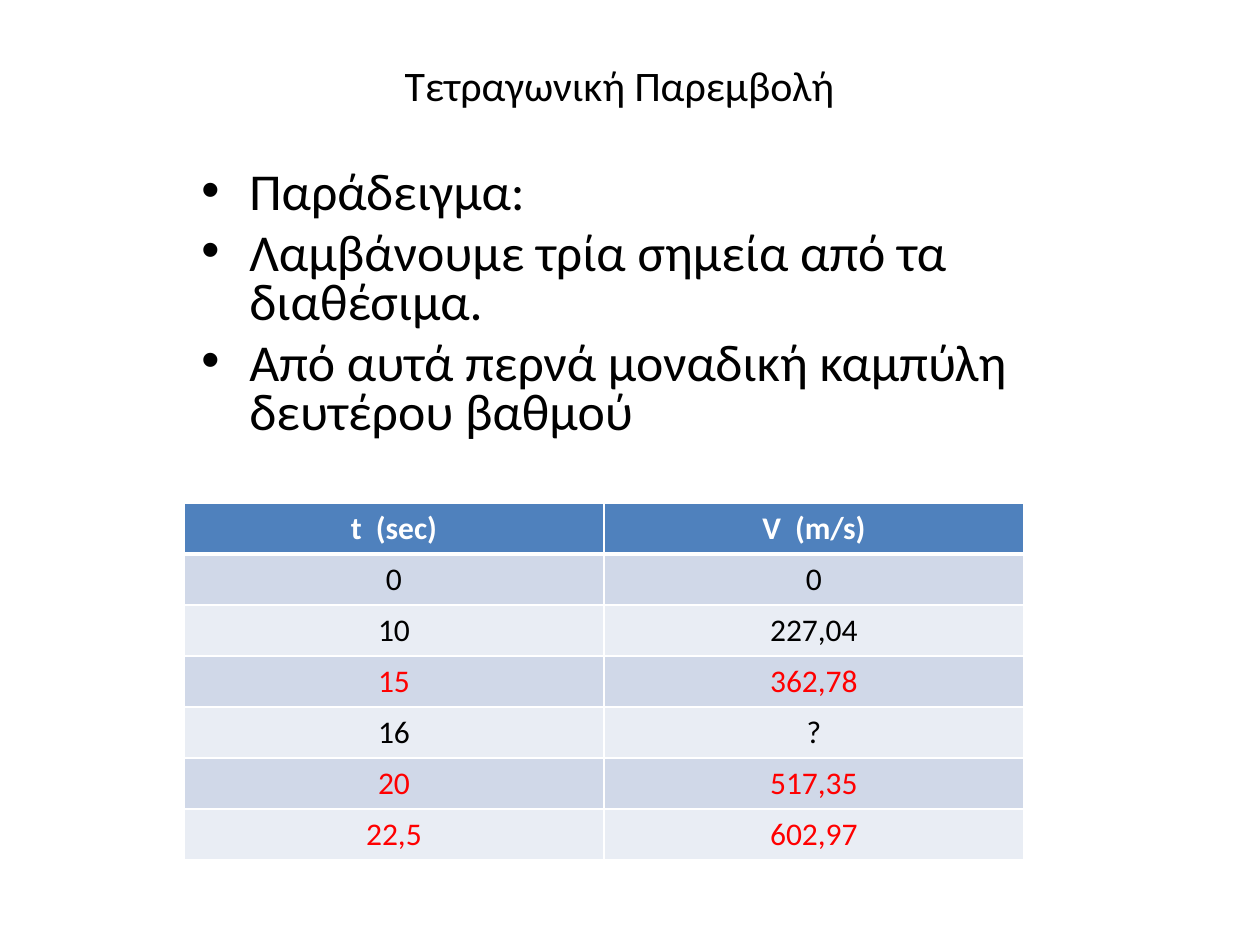
from lxml import etree
from pptx import Presentation
from pptx import util as u
from pptx.dml.color import RGBColor
from pptx.enum import text
from pptx.oxml import ns

PX = u.Inches(1) / 126
FONT = "Calibri"
BLACK, WHITE, RED = "000000", "FFFFFF", "FF0000"
HEADER_FILL, BAND_FILLS = "4F81BD", ("D0D8E8", "E9EDF4")
POINTS = [
    "Παράδειγμα:",
    "Λαμβάνουμε τρία σημεία από τα διαθέσιμα.",
    "Από αυτά περνά μοναδική καμπύλη δευτέρου βαθμού",
]
READINGS = [
    ("t  (sec)", "V  (m/s)"),
    ("0", "0"),
    ("10", "227,04"),
    ("15", "362,78"),
    ("16", "?"),
    ("20", "517,35"),
    ("22,5", "602,97"),
]
CHOSEN_TIMES = {"15", "20", "22,5"}


def px(length):
    """Turn pixels into EMU."""
    return u.Emu(round(length * PX))


def color(value):
    """Turn a hex string into a colour."""
    return RGBColor.from_string(value)


def sub(parent, tag, **attributes):
    """Append a DrawingML element and return it."""
    return etree.SubElement(parent, ns.qn(tag), attributes)


def add_run(paragraph, words, size, ink=BLACK, bold=False):
    """Add one formatted run to a paragraph."""
    run = paragraph.add_run()
    run.text = words
    font = run.font
    font.name, font.size, font.bold = FONT, u.Pt(size), bold
    font.color.rgb = color(ink)


def add_frame(slide, left, top, width, height, anchor):
    """Add a wrapping text box and return its text frame."""
    frame = slide.shapes.add_textbox(px(left), px(top), px(width), px(height)).text_frame
    frame.word_wrap = True
    frame.vertical_anchor = anchor
    return frame


def add_title(slide, words):
    """Add the centred heading."""
    frame = add_frame(slide, 84, 45, 1071, 80, text.MSO_ANCHOR.MIDDLE)
    heading = frame.paragraphs[0]
    heading.alignment = text.PP_ALIGN.CENTER
    add_run(heading, words, 24)


def add_bullets(slide, points):
    """Add the bulleted list."""
    frame = add_frame(slide, 189, 165, 882, 307, text.MSO_ANCHOR.TOP)
    for index, point in enumerate(points):
        item = frame.add_paragraph() if index else frame.paragraphs[0]
        item.line_spacing = 0.8
        item.space_before = u.Pt(6)
        properties = item._p.get_or_add_pPr()
        properties.set("marL", str(px(48)))
        properties.set("indent", str(-px(48)))
        sub(properties, "a:buFont", typeface="Arial")
        sub(properties, "a:buChar", char="•")
        add_run(item, point, 29.6)


def set_borders(cell, bottom_width):
    """Draw white cell borders, with a given bottom width in points."""
    properties = cell._tc.get_or_add_tcPr()
    widths = {"a:lnL": 1, "a:lnR": 1, "a:lnT": 1, "a:lnB": bottom_width}
    for position, (side, width) in enumerate(widths.items()):
        line = sub(properties, side, w=str(u.Pt(width)))
        sub(sub(line, "a:solidFill"), "a:srgbClr", val=WHITE)
        properties.insert(position, line)


def fill_cell(cell, words, fill, ink, header):
    """Write and style one table cell."""
    cell.fill.solid()
    cell.fill.fore_color.rgb = color(fill)
    set_borders(cell, 3 if header else 1)
    paragraph = cell.text_frame.paragraphs[0]
    paragraph.alignment = text.PP_ALIGN.CENTER
    add_run(paragraph, words, 18, ink, header)


def add_readings(slide, readings):
    """Add the table of times and speeds, with the chosen points in red."""
    table = slide.shapes.add_table(
        len(readings), 2, px(184), px(503), px(840), px(51 * len(readings))
    ).table
    for row, values in enumerate(readings):
        header = row == 0
        fill = HEADER_FILL if header else BAND_FILLS[(row - 1) % 2]
        ink = WHITE if header else RED if values[0] in CHOSEN_TIMES else BLACK
        for column, words in enumerate(values):
            fill_cell(table.cell(row, column), words, fill, ink, header)
        table.rows[row].height = px(51)


def main():
    """Build and save the slide."""
    deck = Presentation()
    deck.slide_width, deck.slide_height = px(1260), px(945)
    slide = deck.slides.add_slide(deck.slide_layouts[6])
    add_title(slide, "Τετραγωνική Παρεμβολή")
    add_bullets(slide, POINTS)
    add_readings(slide, READINGS)
    deck.save("out.pptx")


if __name__ == "__main__":
    main()
